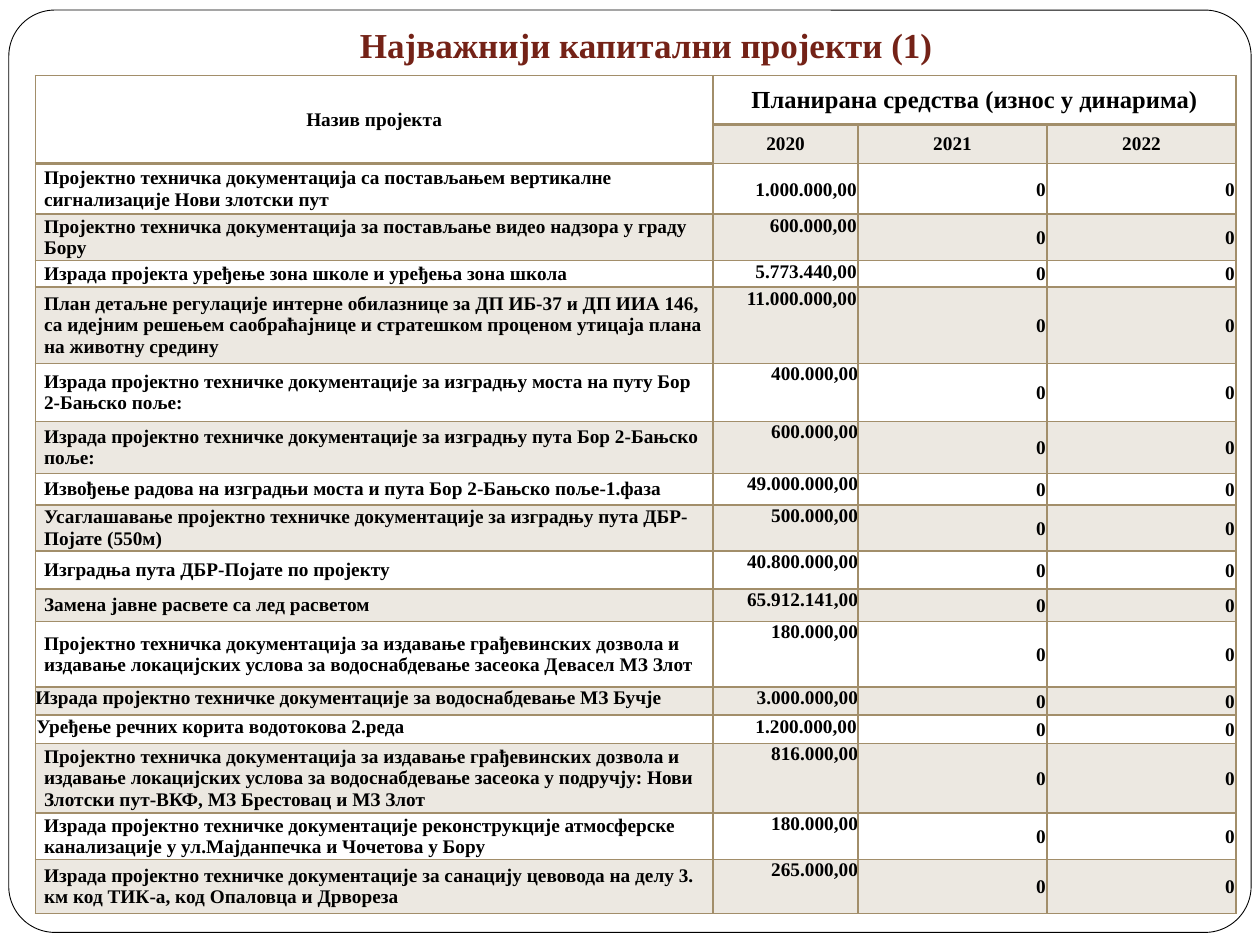
"""Builds the slide with the table of the most important capital projects."""
from lxml import etree
from pptx import Presentation
from pptx import util as u
from pptx.dml.color import RGBColor
from pptx.enum import shapes, text
from pptx.oxml import ns

COLORS = {"title": "742217", "ink": "000000", "paper": "FFFFFF", "bronze": "A28E6A"}
LEFT, CENTER, RIGHT = text.PP_ALIGN.LEFT, text.PP_ALIGN.CENTER, text.PP_ALIGN.RIGHT
TOP, MIDDLE = text.MSO_ANCHOR.TOP, text.MSO_ANCHOR.MIDDLE
WIDE, SLIM, FLUSH = (0.07, 0, 0.07, 0), (0.01, 0.01, 0.01, 0), (0, 0, 0, 0)
COLUMN_WIDTHS = [5.38, 1.15, 1.5, 1.5]
HEADER_HEIGHTS = [0.39, 0.31]
YEARS = ["2020", "2021", "2022"]

PROJECTS = [
    (0.4, "Пројектно техничка документација са постављањем вертикалне сигнализације Нови злотски пут",
     "1.000.000,00", WIDE, SLIM, MIDDLE),
    (0.35, "Пројектно техничка документација за постављање видео надзора у граду Бору",
     "600.000,00", WIDE, SLIM, TOP),
    (0.21, "Израда пројекта уређење зона школе и уређења зона школа",
     "5.773.440,00", WIDE, SLIM, TOP),
    (0.61, "План детаљне регулације интерне обилазнице за ДП ИБ-37 и ДП ИИА 146, са идејним "
     "решењем саобраћајнице и стратешком проценом утицаја плана на животну средину",
     "11.000.000,00", WIDE, SLIM, TOP),
    (0.46, "Израда пројектно техничке документације за изградњу моста на путу Бор 2-Бањско поље:",
     "400.000,00", WIDE, FLUSH, TOP),
    (0.41, "Израда пројектно техничке документације за изградњу пута Бор 2-Бањско поље:",
     "600.000,00", WIDE, FLUSH, TOP),
    (0.25, "Извођење радова на изградњи моста и пута Бор 2-Бањско поље-1.фаза",
     "49.000.000,00", WIDE, FLUSH, TOP),
    (0.35, "Усаглашавање пројектно техничке документације за изградњу пута ДБР-Појате (550м)",
     "500.000,00", WIDE, FLUSH, TOP),
    (0.3, "Изградња пута ДБР-Појате по пројекту", "40.800.000,00", WIDE, FLUSH, TOP),
    (0.26, "Замена јавне расвете са лед расветом", "65.912.141,00", WIDE, FLUSH, TOP),
    (0.52, "Пројектно техничка документација за издавање грађевинских дозвола и издавање "
     "локацијских услова за водоснабдевање засеока Девасел МЗ Злот",
     "180.000,00", WIDE, FLUSH, TOP),
    (0.22, "Израда пројектно техничке документације за водоснабдевање МЗ Бучје",
     "3.000.000,00", FLUSH, FLUSH, TOP),
    (0.23, "Уређење речних корита водотокова 2.реда", "1.200.000,00", SLIM, SLIM, TOP),
    (0.52, "Пројектно техничка документација за издавање грађевинских дозвола и издавање "
     "локацијских услова за водоснабдевање засеока у подручју: Нови Злотски пут-ВКФ, "
     "МЗ Брестовац и МЗ Злот", "816.000,00", WIDE, FLUSH, TOP),
    (0.35, "Израда пројектно техничке документације реконструкције атмосферске канализације "
     "у ул.Мајданпечка и Чочетова у Бору", "180.000,00", WIDE, FLUSH, TOP),
    (0.43, "Израда пројектно техничке документације за санацију цевовода на делу 3. км "
     "код ТИК-а, код Опаловца и Дрвореза", "265.000,00", WIDE, FLUSH, TOP),
]


class ProjectSlide:
    """Holds the style and the current slide."""

    font = "Times New Roman"

    def __init__(self, deck):
        self.slide = deck.slides.add_slide(deck.slide_layouts[6])

    def color(self, name):
        return RGBColor.from_string(COLORS[name])

    def put_words(self, frame, words, size, align, color="ink"):
        frame.word_wrap = True
        paragraph = frame.paragraphs[0]
        paragraph.text = words
        paragraph.alignment = align
        font = paragraph.font
        font.name, font.size, font.bold = self.font, u.Pt(size), True
        font.color.rgb = self.color(color)

    def panel(self, *box):
        panel = self.slide.shapes.add_shape(
            shapes.MSO_SHAPE.ROUNDED_RECTANGLE, *map(u.Inches, box))
        panel.adjustments[0] = 0.05
        panel.shadow.inherit = False
        panel.fill.solid()
        panel.fill.fore_color.rgb = self.color("paper")
        panel.line.color.rgb = self.color("ink")
        panel.line.width = u.Pt(0.5)

    def title(self, words, *box):
        frame = self.slide.shapes.add_textbox(*map(u.Inches, box)).text_frame
        frame.vertical_anchor = text.MSO_ANCHOR.BOTTOM
        frame.margin_bottom = u.Inches(0.1)
        self.put_words(frame, words, 20, CENTER, "title")

    def table(self, left, top, widths, heights):
        box = map(u.Inches, (left, top, sum(widths), sum(heights)))
        table = self.slide.shapes.add_table(len(heights), len(widths), *box).table
        table.first_row = table.horz_banding = False
        for column, width in zip(table.columns, widths):
            column.width = u.Inches(width)
        for row, height in zip(table.rows, heights):
            row.height = u.Inches(height)
        return table

    def paint(self, cell, tinted, bottom=1):
        properties = cell._tc.get_or_add_tcPr()
        for side, width in (("L", 1), ("R", 1), ("T", 1), ("B", bottom)):
            line = etree.SubElement(properties, ns.qn(f"a:ln{side}"), w=str(u.Pt(width)))
            fill = etree.SubElement(line, ns.qn("a:solidFill"))
            etree.SubElement(fill, ns.qn("a:srgbClr"), val=COLORS["bronze"])
        if tinted:
            cell.fill.solid()
            cell.fill.fore_color.rgb = self.color("bronze")
            tint = properties.find(ns.qn("a:solidFill"))[0]
            etree.SubElement(tint, ns.qn("a:alpha"), val="20000")
        else:
            cell.fill.background()

    def cell(self, cell, words, align, margins=WIDE, anchor=MIDDLE, size=11):
        self.put_words(cell.text_frame, words, size, align)
        cell.vertical_anchor = anchor
        (cell.margin_left, cell.margin_top,
         cell.margin_right, cell.margin_bottom) = map(u.Inches, margins)


def main():
    deck = Presentation()
    deck.slide_width, deck.slide_height = u.Inches(10), u.Inches(7.5)
    page = ProjectSlide(deck)
    page.panel(0.07, 0.08, 9.86, 7.32)
    page.title("Најважнији капитални пројекти (1)", 0.63, -0.34, 9, 0.96)

    heights = HEADER_HEIGHTS + [project[0] for project in PROJECTS]
    plan = page.table(0.28, 0.6, COLUMN_WIDTHS, heights)
    for row in range(len(heights)):
        for column in range(len(COLUMN_WIDTHS)):
            merged_name = column == 0 and row < 2
            page.paint(plan.cell(row, column), row % 2 == 1 and not merged_name,
                       2 if row == 0 or merged_name else 1)

    plan.cell(0, 0).merge(plan.cell(1, 0))
    plan.cell(0, 1).merge(plan.cell(0, 3))
    page.cell(plan.cell(0, 0), "Назив пројекта", CENTER)
    page.cell(plan.cell(0, 1), "Планирана средства (износ у динарима)", CENTER, size=14)
    for column, year in enumerate(YEARS, 1):
        page.cell(plan.cell(1, column), year, CENTER)

    for row, (_, name, amount, name_margins, amount_margins, anchor) in enumerate(PROJECTS, 2):
        name_anchor = MIDDLE if name_margins == WIDE else TOP
        page.cell(plan.cell(row, 0), name, LEFT, name_margins, name_anchor)
        page.cell(plan.cell(row, 1), amount, RIGHT, amount_margins, anchor)
        for column in (2, 3):
            page.cell(plan.cell(row, column), "0", RIGHT, SLIM)

    deck.save("out.pptx")


if __name__ == "__main__":
    main()
